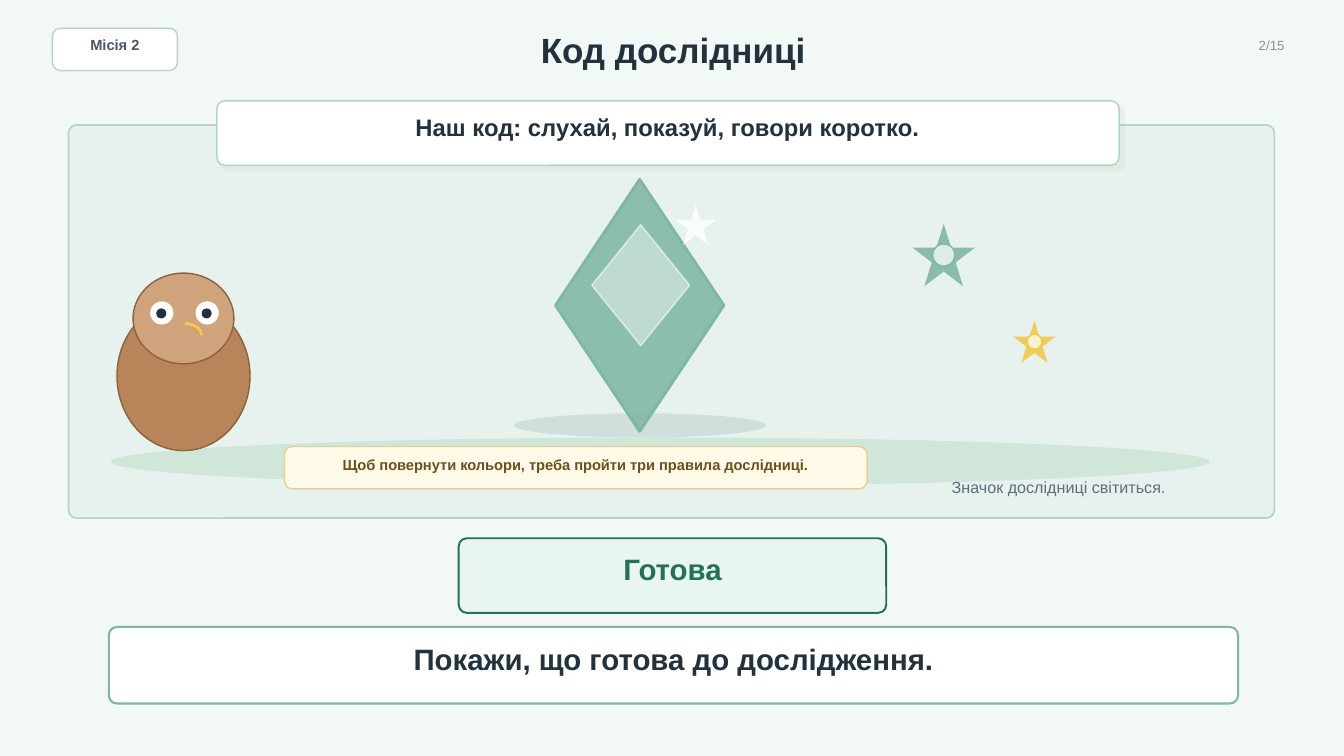
from lxml.etree import SubElement
from pptx import Presentation
from pptx.dml.color import RGBColor
from pptx.enum.shapes import MSO_SHAPE
from pptx.enum.text import MSO_ANCHOR, PP_ALIGN
from pptx.oxml.ns import qn
from pptx.util import Inches, Pt

BACKGROUND = RGBColor(0xF2, 0xF8, 0xF5)
WHITE = RGBColor(0xFF, 0xFF, 0xFF)
INK = RGBColor(0x23, 0x31, 0x3D)
SLATE = RGBColor(0x4B, 0x55, 0x63)
CAPTION_GREY = RGBColor(0x5E, 0x6C, 0x78)
PAGE_GREY = RGBColor(0x8A, 0x92, 0x9A)
SCENE = RGBColor(0xE7, 0xF2, 0xEE)
MINT_LINE = RGBColor(0xB7, 0xD3, 0xC7)
GRASS = RGBColor(0xCF, 0xE6, 0xD7)
CRYSTAL = RGBColor(0x7F, 0xB7, 0xA3)
CRYSTAL_SHADE = RGBColor(0xC9, 0xD9, 0xD5)
BODY_BROWN = RGBColor(0xB8, 0x84, 0x5A)
HEAD_BROWN = RGBColor(0xCF, 0xA4, 0x7C)
BROWN_LINE = RGBColor(0x8C, 0x62, 0x3E)
GOLD = RGBColor(0xF2, 0xC9, 0x4C)
CREAM = RGBColor(0xFF, 0xF9, 0xE8)
CREAM_LINE = RGBColor(0xE4, 0xCF, 0x98)
CREAM_TEXT = RGBColor(0x6B, 0x51, 0x20)
READY_FILL = RGBColor(0xE9, 0xF6, 0xF0)
READY_GREEN = RGBColor(0x24, 0x70, 0x58)
CARD_SHADOW = RGBColor(0xC8, 0xC1, 0xB0)


def set_opacity(color_parent, percent):
    color = color_parent.find(qn("a:solidFill"))[0]
    SubElement(color, qn("a:alpha"), val=str(percent * 1000))


class SlidePainter:
    font_name = "Arial"
    corner_radius = 0.08
    core_ratio = 0.355

    def __init__(self, slide):
        self.slide = slide
        slide.background.fill.solid()
        slide.background.fill.fore_color.rgb = BACKGROUND

    def shape(self, kind, box, fill=None, line=None, width=1,
              opacity=100, line_opacity=100):
        shape = self.slide.shapes.add_shape(kind, *map(Inches, box))
        shape.shadow.inherit = False
        properties = shape._element.spPr
        if fill is None:
            shape.fill.background()
        else:
            shape.fill.solid()
            shape.fill.fore_color.rgb = fill
            if opacity < 100:
                set_opacity(properties, opacity)
        if line is None:
            shape.line.fill.background()
        else:
            shape.line.color.rgb = line
            shape.line.width = Pt(width)
            if line_opacity < 100:
                set_opacity(properties.find(qn("a:ln")), line_opacity)
        return shape

    def ellipse(self, box, fill, **style):
        return self.shape(MSO_SHAPE.OVAL, box, fill, **style)

    def card(self, box, fill, line, width=1):
        """Draw a rounded panel whose corner radius is the same at any size."""
        card = self.shape(MSO_SHAPE.ROUNDED_RECTANGLE, box, fill, line, width)
        card.adjustments[0] = self.corner_radius / min(box[2:])
        return card

    def drop_shadow(self, shape, color, opacity, blur, distance, angle):
        effects = shape._element.spPr.find(qn("a:effectLst"))
        shadow = SubElement(
            effects, qn("a:outerShdw"), blurRad=str(Pt(blur)),
            dist=str(Pt(distance)), dir=str(angle * 60000),
            algn="bl", rotWithShape="0")
        shadow_color = SubElement(shadow, qn("a:srgbClr"), val=str(color))
        SubElement(shadow_color, qn("a:alpha"), val=str(opacity * 1000))

    def text(self, box, words, size, color, bold=True, align=PP_ALIGN.CENTER):
        text_frame = self.slide.shapes.add_textbox(*map(Inches, box)).text_frame
        text_frame.text = words
        text_frame.word_wrap = True
        text_frame.vertical_anchor = MSO_ANCHOR.MIDDLE
        text_frame.margin_left = text_frame.margin_right = 0
        text_frame.margin_top = text_frame.margin_bottom = 0
        paragraph = text_frame.paragraphs[0]
        paragraph.alignment = align
        font = paragraph.runs[0].font
        font.name = self.font_name
        font.size = Pt(size)
        font.bold = bold
        font.color.rgb = color

    def star_badge(self, left, top, size, color):
        """Draw a star with a pale round core at its centre."""
        self.shape(MSO_SHAPE.STAR_5_POINT, (left, top, size, size), color,
                   opacity=90)
        core = round(size * self.core_ratio, 2)
        inset = (size - core) / 2
        self.ellipse((left + inset, top + inset, core, core), WHITE,
                     line=color, opacity=72)

    def owl(self):
        self.ellipse((1.16, 2.99, 1.32, 1.48), BODY_BROWN, line=BROWN_LINE)
        self.ellipse((1.32, 2.71, 1, 0.9), HEAD_BROWN, line=BROWN_LINE)
        for eye_left in (1.49, 1.94):
            self.ellipse((eye_left, 2.99, 0.23, 0.23), WHITE)
            self.ellipse((eye_left + 0.06, 3.06, 0.1, 0.1), INK)
        self.shape(MSO_SHAPE.ARC, (1.67, 3.21, 0.33, 0.23), line=GOLD, width=2)

    def crystal(self):
        self.ellipse((5.1, 4.1, 2.5, 0.24), CRYSTAL_SHADE, opacity=75)
        self.shape(MSO_SHAPE.DIAMOND, (5.51, 1.78, 1.67, 2.5), CRYSTAL,
                   CRYSTAL, 2, opacity=88)
        self.shape(MSO_SHAPE.DIAMOND, (5.87, 2.23, 0.97, 1.2), WHITE,
                   WHITE, opacity=45, line_opacity=60)
        self.shape(MSO_SHAPE.STAR_5_POINT, (6.7, 2.03, 0.4, 0.4), WHITE,
                   opacity=82)


def main():
    presentation = Presentation()
    presentation.slide_width = Inches(13.33)
    presentation.slide_height = Inches(7.5)
    slide = presentation.slides.add_slide(presentation.slide_layouts[6])
    painter = SlidePainter(slide)

    painter.card((0.52, 0.28, 1.24, 0.42), WHITE, MINT_LINE)
    painter.text((0.62, 0.37, 1.04, 0.15), "Місія 2", 10.5, SLATE)
    painter.text((2, 0.25, 9.35, 0.48), "Код дослідниці", 25, INK)
    painter.text((12.02, 0.37, 0.72, 0.16), "2/15", 9.5, PAGE_GREY,
                 bold=False, align=PP_ALIGN.RIGHT)

    painter.card((0.68, 1.24, 11.96, 3.9), SCENE, MINT_LINE, 1.2)
    painter.ellipse((1.1, 4.34, 10.9, 0.48), GRASS, opacity=92)
    painter.owl()
    painter.crystal()
    painter.star_badge(9.05, 2.22, 0.62, CRYSTAL)
    painter.star_badge(10.05, 3.18, 0.42, GOLD)

    code_card = painter.card((2.15, 1, 8.95, 0.64), WHITE, MINT_LINE, 1.1)
    painter.drop_shadow(code_card, CARD_SHADOW, opacity=16, blur=1,
                        distance=4, angle=45)
    painter.text((2.38, 1.13, 8.48, 0.26),
                 "Наш код: слухай, показуй, говори коротко.", 17, INK)

    painter.card((2.82, 4.43, 5.78, 0.42), CREAM, CREAM_LINE)
    painter.text((2.98, 4.52, 5.46, 0.18),
                 "Щоб повернути кольори, треба пройти три правила дослідниці.",
                 10.5, CREAM_TEXT)

    painter.card((1.08, 6.22, 11.2, 0.76), WHITE, CRYSTAL, 1.5)
    painter.text((1.34, 6.39, 10.68, 0.28),
                 "Покажи, що готова до дослідження.", 21, INK)

    painter.card((4.55, 5.34, 4.24, 0.74), READY_FILL, READY_GREEN, 1.4)
    painter.text((4.78, 5.48, 3.78, 0.32), "Готова", 21, READY_GREEN)
    painter.text((9, 4.72, 3, 0.22), "Значок дослідниці світиться.", 11.5,
                 CAPTION_GREY, bold=False)

    presentation.save("out.pptx")


if __name__ == "__main__":
    main()
